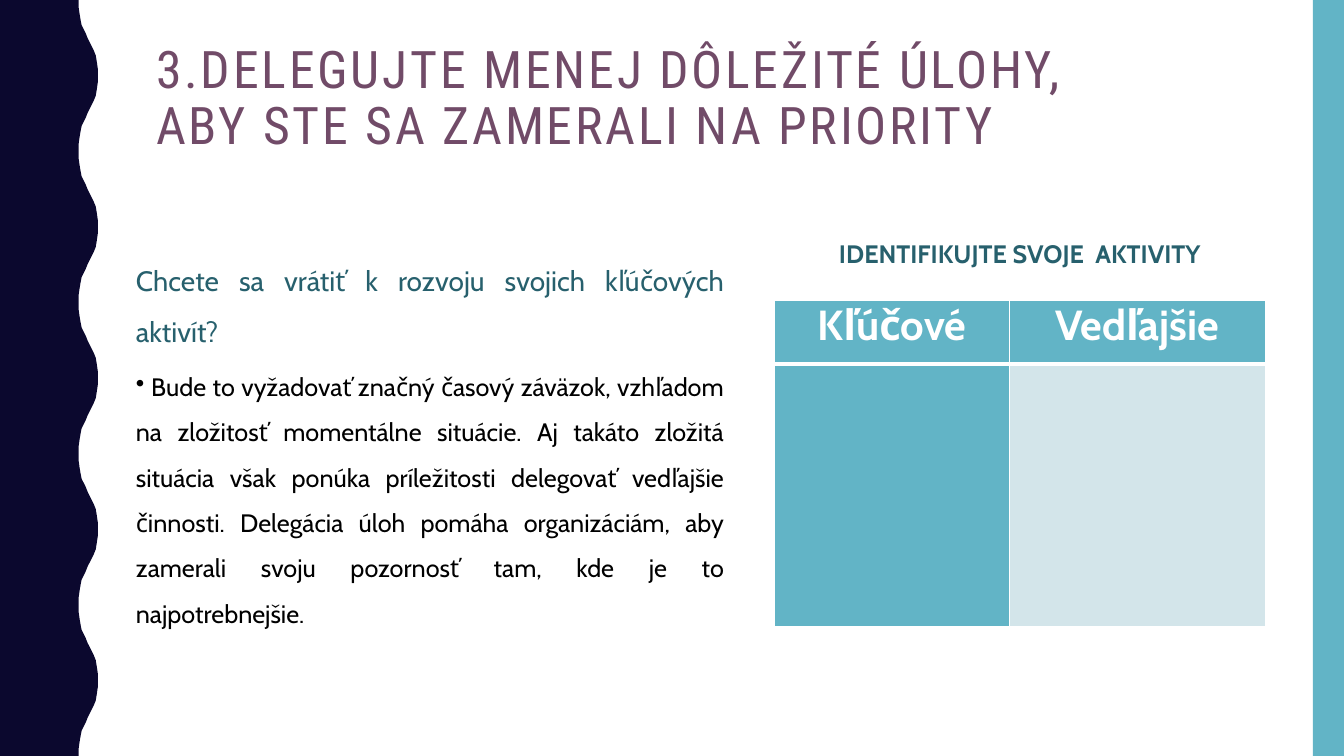
import pptx
import pptx.dml.color
import pptx.enum.shapes
import pptx.enum.text
import pptx.oxml
import pptx.oxml.ns
import pptx.util

PX = 9144
SLIDE_WIDTH, SLIDE_HEIGHT = 1333, 750
NAVY, TEAL, PALE_TEAL = "0B082E", "62B4C6", "D3E5EA"
DARK_TEAL, PLUM, BLACK, WHITE = "27606D", "714B68", "000000", "FFFFFF"
WAVE_PERIOD = 150
WAVE_HALF = [
    (78, 0), (78, 7), (79, 14), (80, 20), (81, 25), (83, 29), (85, 33), (87, 38),
    (89, 42), (91, 46), (93, 50), (95, 55), (96, 61), (97, 68), (97, 75),
]
ALIGN = pptx.enum.text.PP_ALIGN


def px(*lengths):
    """Turn px lengths into a list of EMU lengths."""
    return [pptx.util.Emu(length * PX) for length in lengths]


def color(value):
    """Turn a hex string into a colour."""
    return pptx.dml.color.RGBColor.from_string(value)


def paint(shape, fill):
    """Give a shape a plain fill without line or shadow."""
    shape.fill.solid()
    shape.fill.fore_color.rgb = color(fill)
    shape.line.fill.background()
    shape.shadow.inherit = False


def write(paragraph, text, *, size, fill, font="Cabin", bold=False, align=ALIGN.LEFT,
          line_spacing=1.0, space_after=0, tracking=None, bullet=None):
    """Write formatted text into a paragraph."""
    paragraph.alignment = align
    paragraph.line_spacing = line_spacing
    paragraph.space_before = pptx.util.Pt(0)
    paragraph.space_after = pptx.util.Pt(space_after)
    run = paragraph.add_run()
    run.text = text
    run.font.name = font
    run.font.size = pptx.util.Pt(size)
    run.font.bold = bold
    run.font.color.rgb = color(fill)
    if tracking:
        run.font._element.set("spc", str(tracking * 100))
    if bullet:
        properties = paragraph._p.get_or_add_pPr()
        properties.set("marL", "0")
        properties.set("indent", str(-25 * PX))
        mark = pptx.oxml.parse_xml(
            f'<a:buChar {pptx.oxml.ns.nsdecls("a")} char="{bullet}"/>')
        properties.append(mark)


def add_text_box(slide, *box):
    """Add a wrapping text box and return its text frame."""
    frame = slide.shapes.add_textbox(*px(*box)).text_frame
    frame.word_wrap = True
    return frame


def add_wave(slide):
    """Add the wavy band along the left edge."""
    mirrored = [(x, WAVE_PERIOD - y) for x, y in reversed(WAVE_HALF[:-1])]
    edge = [(x, y + top) for top in range(0, SLIDE_HEIGHT, WAVE_PERIOD)
            for x, y in WAVE_HALF + mirrored]
    builder = slide.shapes.build_freeform(0, 0, scale=PX)
    builder.add_line_segments(edge + [(0, SLIDE_HEIGHT)], close=True)
    paint(builder.convert_to_shape(), NAVY)


def add_side_bar(slide):
    """Add the bar along the right edge."""
    bar = slide.shapes.add_shape(
        pptx.enum.shapes.MSO_SHAPE.RECTANGLE, *px(1302, 0, 31, SLIDE_HEIGHT))
    paint(bar, TEAL)


def add_title(slide, text):
    """Place and fill the title placeholder."""
    title = slide.shapes.title
    title.left, title.top, title.width, title.height = px(145, 28, 942, 141)
    frame = title.text_frame
    frame.auto_size = pptx.enum.text.MSO_AUTO_SIZE.NONE
    frame.vertical_anchor = pptx.enum.text.MSO_ANCHOR.MIDDLE
    write(frame.paragraphs[0], text, size=37, fill=PLUM, font="Roboto Condensed",
          line_spacing=0.9, tracking=2)


def format_cell(cell, fill, bottom_width):
    """Give a table cell its fill, margins and white borders."""
    properties = cell._tc.get_or_add_tcPr()
    for side, width in {"L": 1, "R": 1, "T": 1, "B": bottom_width}.items():
        properties.append(pptx.oxml.parse_xml(
            f'<a:ln{side} {pptx.oxml.ns.nsdecls("a")} w="{pptx.util.Pt(width)}">'
            f'<a:solidFill><a:srgbClr val="{WHITE}"/></a:solidFill></a:ln{side}>'))
    cell.fill.solid()
    cell.fill.fore_color.rgb = color(fill)
    cell.margin_left, cell.margin_right = px(25, 25)
    cell.margin_top = cell.margin_bottom = 0


def add_activity_table(slide, headings, body_fills):
    """Add the table of activities with an empty row to fill in."""
    table = slide.shapes.add_table(2, 2, *px(768, 298, 487, 324)).table
    table.horz_banding = False
    for column, width in zip(table.columns, px(233, 254)):
        column.width = width
    for row, height in zip(table.rows, px(63, 261)):
        row.height = height
    for index, (heading, body_fill) in enumerate(zip(headings, body_fills)):
        header = table.cell(0, index)
        format_cell(header, TEAL, 3)
        write(header.text_frame.paragraphs[0], heading, size=30, fill=WHITE,
              bold=True, align=ALIGN.CENTER)
        format_cell(table.cell(1, index), body_fill, 1)


def main():
    """Build the slide and save it."""
    presentation = pptx.Presentation()
    presentation.slide_width, presentation.slide_height = px(SLIDE_WIDTH, SLIDE_HEIGHT)
    slide = presentation.slides.add_slide(presentation.slide_layouts[5])
    add_wave(slide)
    add_side_bar(slide)
    add_title(slide, "3.DELEGUJTE MENEJ DÔLEŽITÉ ÚLOHY, ABY STE SA ZAMERALI NA PRIORITY")
    add_activity_table(slide, ["Kľúčové", "Vedľajšie"], [TEAL, PALE_TEAL])

    body = add_text_box(slide, 125, 240, 603, 440)
    body_format = {"align": ALIGN.JUSTIFY, "line_spacing": 1.5, "space_after": 6}
    write(body.paragraphs[0], "Chcete sa vrátiť k rozvoju svojich kľúčových aktivít?",
          size=20, fill=DARK_TEAL, **body_format)
    write(body.add_paragraph(),
          " Bude to vyžadovať značný časový záväzok, vzhľadom na zložitosť "
          "momentálne situácie. Aj takáto zložitá situácia však ponúka príležitosti "
          "delegovať vedľajšie činnosti. Delegácia úloh pomáha organizáciám, aby "
          "zamerali svoju pozornosť tam, kde je to najpotrebnejšie.",
          size=18, fill=BLACK, bullet="•", **body_format)

    caption = add_text_box(slide, 768, 232, 487, 40)
    caption.auto_size = pptx.enum.text.MSO_AUTO_SIZE.SHAPE_TO_FIT_TEXT
    write(caption.paragraphs[0], "IDENTIFIKUJTE SVOJE  AKTIVITY", size=18,
          fill=DARK_TEAL, bold=True, align=ALIGN.CENTER)
    presentation.save("out.pptx")


if __name__ == "__main__":
    main()
